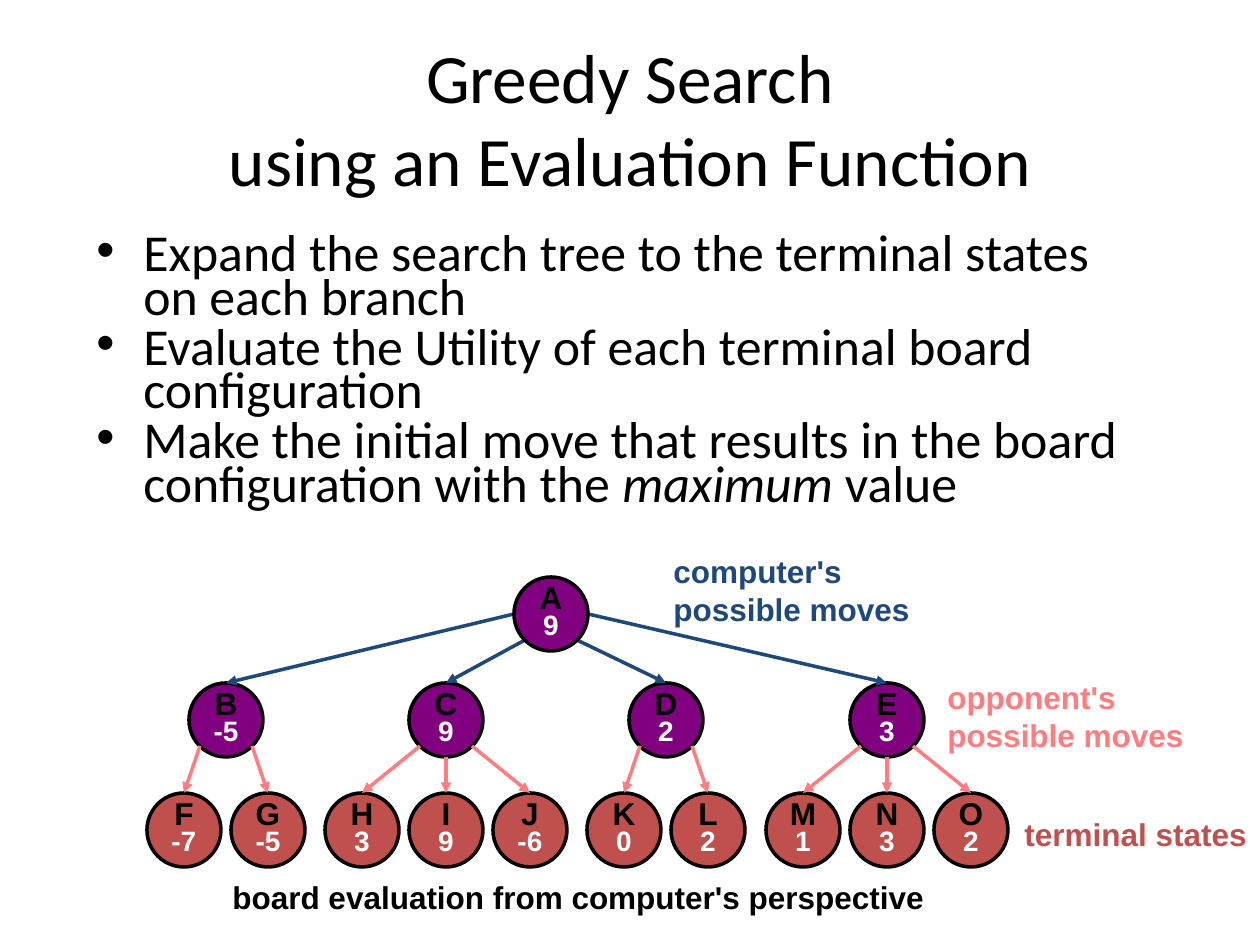
from lxml import etree
from pptx import Presentation
from pptx.dml.color import RGBColor
from pptx.enum.shapes import MSO_CONNECTOR, MSO_SHAPE
from pptx.enum.text import MSO_ANCHOR, PP_ALIGN
from pptx.oxml.ns import qn
from pptx.util import Pt

OVAL = MSO_SHAPE.OVAL
LINE = MSO_CONNECTOR.STRAIGHT
MID, TOP = MSO_ANCHOR.MIDDLE, MSO_ANCHOR.TOP
MIDDLE, LEFT = PP_ALIGN.CENTER, PP_ALIGN.LEFT

THEME = {
    "black": "000000", "white": "FFFFFF", "navy": "1F497D",
    "pink": "FF7C80", "plum": "800080", "brick": "C0504D",
    "head": "Calibri", "body": "Arial",
    "title": 39.6, "list": 29.6, "label": 18, "score": 16, "line": 2,
}

TITLE = ["Greedy Search", "using an Evaluation Function"]
POINTS = [
    [("Expand the search tree to the terminal states", False), None,
     ("on each branch", False)],
    [("Evaluate the Utility of each terminal board configuration", False)],
    [("Make the initial move that results in the board configuration with the ", False),
     ("maximum", True), (" value", False)],
]
ROOT = ("A", "9")
TREE = [
    (("B", "-5"), [("F", "-7"), ("G", "-5")]),
    (("C", "9"), [("H", "3"), ("I", "9"), ("J", "-6")]),
    (("D", "2"), [("K", "0"), ("L", "2")]),
    (("E", "3"), [("M", "1"), ("N", "3"), ("O", "2")]),
]
LABELS = [
    (["computer's", "possible moves"], "navy", (661, 546, 262, 88)),
    (["opponent's", "possible moves"], "pink", (935, 672, 262, 88)),
    (["board evaluation from computer's perspective"], "black", (220, 872, 717, 50)),
    (["terminal states"], "brick", (1012, 809, 248, 50)),
]

SCALE = 914400 / 126
SIZE, HALF, DIAG = 74, 37, 26
ROWS = (614, 720, 830)
ROOT_X, FIRST_X, SPAN, STEP = 551, 226, 661, 84
WEST, EAST, SOUTH = (-HALF, 0), (HALF, 0), (0, HALF)
LOW_W, LOW_E = (-DIAG, DIAG), (DIAG, DIAG)
EXITS = {
    2: [LOW_W, LOW_E],
    3: [LOW_W, SOUTH, LOW_E],
    4: [WEST, LOW_W, LOW_E, EAST],
}


def px(n):
    return round(n * SCALE)


def tint(name):
    return RGBColor.from_string(THEME[name])


def put(par, text, size, color, face, bold=False, slant=False):
    run = par.add_run()
    run.text = text
    font = run.font
    font.name, font.size = THEME[face], Pt(THEME[size])
    font.bold, font.italic = bold, slant
    font.color.rgb = tint(color)


def lines(par, texts, *style):
    for i, text in enumerate(texts):
        if i:
            par.add_line_break()
        put(par, text, *style)


def box(slide, spot, wrap=True, anchor=TOP):
    frame = slide.shapes.add_textbox(*map(px, spot)).text_frame
    frame.word_wrap, frame.vertical_anchor = wrap, anchor
    return frame


def bullets(frame):
    for i, parts in enumerate(POINTS):
        par = frame.add_paragraph() if i else frame.paragraphs[0]
        par.alignment, par.line_spacing, par.space_before = LEFT, 0.7, Pt(3.6)
        props = par._p.get_or_add_pPr()
        props.set("marL", str(px(47)))
        props.set("indent", str(px(-47)))
        etree.SubElement(props, qn("a:buFont"), typeface="Arial")
        etree.SubElement(props, qn("a:buChar"), char="•")
        for part in parts:
            if part is None:
                par.add_line_break()
            else:
                put(par, part[0], "list", "black", "head", False, part[1])


def node(slide, data, x, y, fill):
    spot = (x - HALF, y - HALF, SIZE, SIZE)
    shape = slide.shapes.add_shape(OVAL, *map(px, spot))
    shape.shadow.inherit = False
    shape.fill.solid()
    shape.fill.fore_color.rgb = tint(fill)
    shape.line.color.rgb = tint("black")
    shape.line.width = Pt(THEME["line"])
    frame = shape.text_frame
    frame.word_wrap, frame.vertical_anchor = False, MID
    styles = [("label", "black"), ("score", "white")]
    for i, (text, (size, color)) in enumerate(zip(data, styles)):
        par = frame.add_paragraph() if i else frame.paragraphs[0]
        par.alignment, par.line_spacing = MIDDLE, 0.75
        put(par, text, size, color, "body", True)
    return shape


def link(slide, x, y, kids, color):
    for (dx, dy), kid in zip(EXITS[len(kids)], kids):
        arrow = slide.shapes.add_connector(LINE, px(x + dx), px(y + dy), 0, 0)
        arrow.end_connect(kid, 0)
        arrow.line.color.rgb = tint(color)
        arrow.line.width = Pt(THEME["line"])
        etree.SubElement(arrow.line._get_or_add_ln(), qn("a:tailEnd"), type="triangle")
        etree.SubElement(arrow._element.spPr, qn("a:effectLst"))


def tree(slide):
    top, mid, low = ROWS
    moves = []
    for i, (data, kids) in enumerate(TREE):
        x = FIRST_X + i * SPAN // (len(TREE) - 1)
        moves.append(node(slide, data, x, mid, "plum"))
        left = x - (len(kids) - 1) * STEP // 2
        ends = [node(slide, kid, left + j * STEP, low, "brick")
                for j, kid in enumerate(kids)]
        link(slide, x, mid, ends, "pink")
    link(slide, ROOT_X, top, moves, "navy")
    node(slide, ROOT, ROOT_X, top, "plum")


def main():
    deck = Presentation()
    deck.slide_width, deck.slide_height = px(1260), px(945)
    slide = deck.slides.add_slide(deck.slide_layouts[6])
    par = box(slide, (63, 38, 1134, 158), anchor=MID).paragraphs[0]
    par.alignment = MIDDLE
    lines(par, TITLE, "title", "black", "head")
    bullets(box(slide, (84, 231, 1144, 315)))
    tree(slide)
    for texts, color, spot in LABELS:
        par = box(slide, spot, wrap=False).paragraphs[0]
        lines(par, texts, "label", color, "body", True)
    deck.save("out.pptx")


if __name__ == "__main__":
    main()
